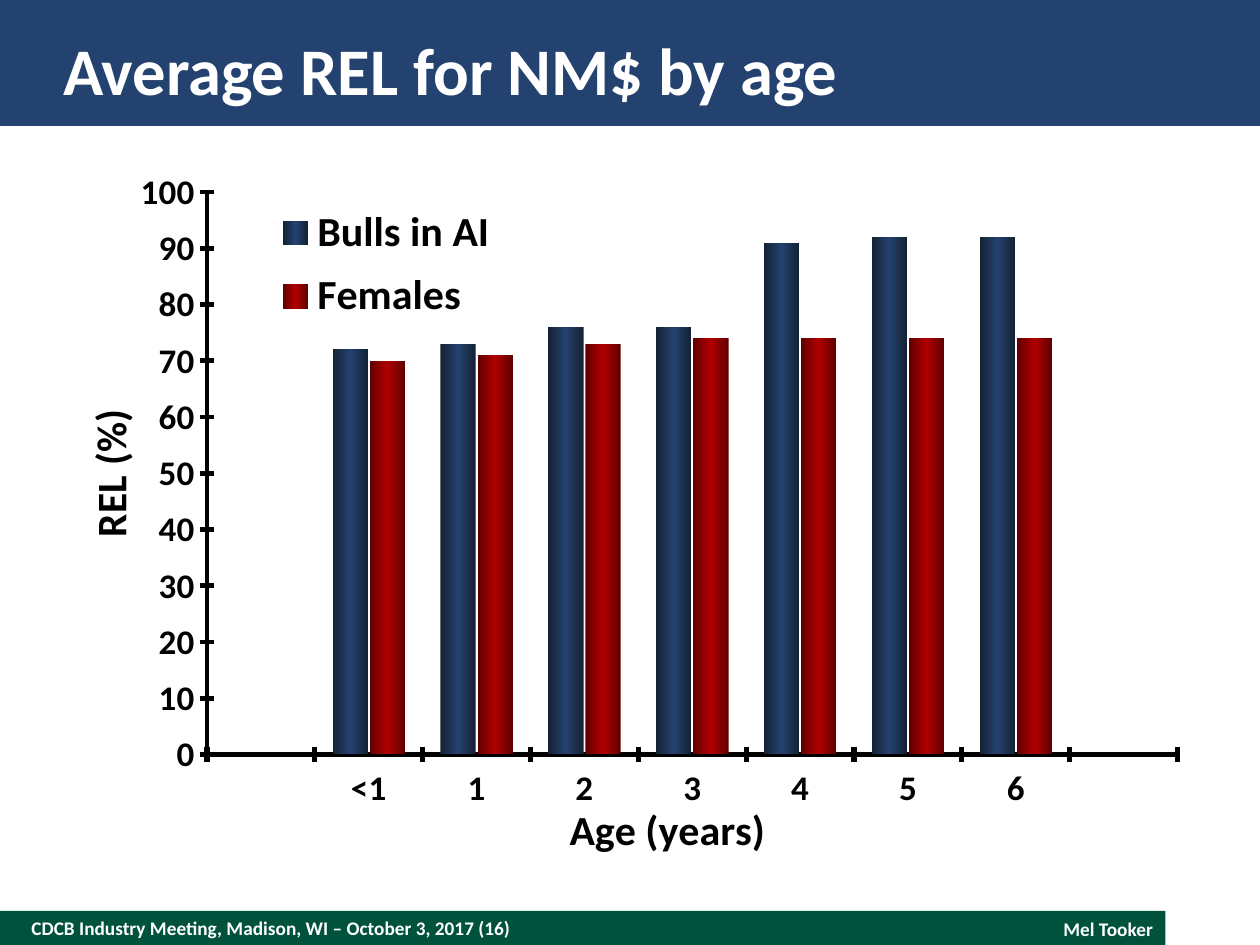
from copy import deepcopy
from dataclasses import dataclass

from pptx import Presentation
from pptx.chart.data import CategoryChartData
from pptx.dml.color import RGBColor
from pptx.enum.chart import XL_CHART_TYPE, XL_LEGEND_POSITION, XL_TICK_MARK
from pptx.enum.shapes import MSO_SHAPE
from pptx.enum.text import MSO_ANCHOR, MSO_AUTO_SIZE, PP_ALIGN
from pptx.oxml import parse_xml
from pptx.oxml.ns import nsdecls, qn
from pptx.util import Inches, Pt


@dataclass(frozen=True)
class Theme:
    font: str = "Calibri"
    navy: str = "244270"
    green: str = "00523C"
    white: str = "FFFFFF"
    black: str = "000000"
    title_size: int = 38
    label_size: int = 24
    tick_size: int = 20
    chart_size: int = 18
    footer_size: int = 11


THEME = Theme()
WIDTH, HEIGHT = 10, 7.5
FOOTER_HEIGHT = 0.27
FOOTER_TOP = HEIGHT - FOOTER_HEIGHT

HEADING = "Average REL for NM$ by age"
MEETING = "CDCB Industry Meeting, Madison, WI – October 3, 2017 (16)"
SPEAKER = "Mel Tooker"

AGES = ["", "<1", "1", "2", "3", "4", "5", "6", ""]
RELIABILITY = {
    "Bulls in AI": [None, 72, 73, 76, 76, 91, 92, 92, None],
    "Females": [None, 70, 71, 73, 74, 74, 74, 74, None],
}
BAR_SHADES = [("132133", THEME.navy), ("600000", "B00000")]

PLOT_AREA = dict(x=0.127, y=0.046, w=0.856, h=0.807)
LEGEND_AREA = dict(x=0.16, y=0.05, w=0.25, h=0.2)
AGE_TITLE_AREA = dict(x=0.44, y=0.91)
REL_TITLE_AREA = dict(x=0.01, y=0.35)


def rgb(value):
    return RGBColor.from_string(value)


def style(font, size, color):
    font.name = THEME.font
    font.size = Pt(size)
    font.bold = True
    font.color.rgb = rgb(color)


def write(frame, text, size, color, align=PP_ALIGN.LEFT):
    paragraph = frame.paragraphs[0]
    paragraph.alignment = align
    run = paragraph.add_run()
    run.text = text
    style(run.font, size, color)


def clear_margins(frame):
    frame.margin_left = frame.margin_right = 0
    frame.margin_top = frame.margin_bottom = 0


def add_band(slide, top, width, height, color):
    band = slide.shapes.add_shape(
        MSO_SHAPE.RECTANGLE, 0, Inches(top), Inches(width), Inches(height))
    band.shadow.inherit = False
    band.fill.solid()
    band.fill.fore_color.rgb = rgb(color)
    band.line.fill.background()


def add_footer_text(slide, left, width, height, text, align):
    box = slide.shapes.add_textbox(
        Inches(left), Inches(FOOTER_TOP), Inches(width), Inches(height))
    frame = box.text_frame
    frame.word_wrap = True
    write(frame, text, THEME.footer_size, THEME.white, align)
    return frame


def place(element, index, area, inner=False):
    for old in element.findall(qn("c:layout")):
        element.remove(old)
    target = '<c:layoutTarget val="inner"/>' if inner else ""
    modes = "".join(f'<c:{key}Mode val="edge"/>' for key in "xy")
    sizes = "".join(f'<c:{key} val="{value}"/>' for key, value in area.items())
    element.insert(index, parse_xml(
        f'<c:layout {nsdecls("c")}><c:manualLayout>{target}{modes}{sizes}'
        "</c:manualLayout></c:layout>"))


def style_axis(axis, title, area, line_width):
    axis.has_major_gridlines = False
    axis.major_tick_mark = XL_TICK_MARK.CROSS
    axis.minor_tick_mark = XL_TICK_MARK.NONE
    axis.format.line.color.rgb = rgb(THEME.black)
    axis.format.line.width = Pt(line_width)
    style(axis.tick_labels.font, THEME.tick_size, THEME.black)
    write(axis.axis_title.text_frame, title, THEME.label_size, THEME.black,
          PP_ALIGN.CENTER)
    place(axis.axis_title._element, 1, area)


def shade_bars(series, edge, middle):
    fill = series.format.fill
    fill.gradient()
    fill.gradient_angle = 0
    stop_list = next(series._element.iter(qn("a:gsLst")))
    stop_list.append(deepcopy(stop_list[0]))
    for stop, position, color in zip(
            fill.gradient_stops, (0, 0.5, 1), (edge, middle, edge)):
        stop.position = position
        stop.color.rgb = rgb(color)
    series.invert_if_negative = False


def add_reliability_chart(slide):
    data = CategoryChartData()
    data.categories = AGES
    for group, values in RELIABILITY.items():
        data.add_series(group, values)
    chart = slide.shapes.add_chart(
        XL_CHART_TYPE.COLUMN_CLUSTERED, Inches(0.5), Inches(1.27),
        Inches(9), Inches(5.63), data).chart
    chart.has_title = False
    style(chart.font, THEME.chart_size, THEME.black)

    bars = chart.plots[0]
    bars.vary_by_categories = False
    bars.gap_width = 100
    bars.overlap = -5
    for series, shades in zip(bars.series, BAR_SHADES):
        shade_bars(series, *shades)

    style_axis(chart.category_axis, "Age (years)", AGE_TITLE_AREA, 3)
    style_axis(chart.value_axis, "REL (%)", REL_TITLE_AREA, 2.75)
    chart.value_axis.minimum_scale = 0
    chart.value_axis.maximum_scale = 100
    chart.value_axis.major_unit = 10

    chart.has_legend = True
    legend = chart.legend
    legend.position = XL_LEGEND_POSITION.RIGHT
    legend.include_in_layout = False
    style(legend.font, THEME.label_size, THEME.black)
    place(legend._element, 1, LEGEND_AREA)
    place(next(chart._chartSpace.iter(qn("c:plotArea"))), 0, PLOT_AREA, inner=True)


def main():
    deck = Presentation()
    deck.slide_width, deck.slide_height = Inches(WIDTH), Inches(HEIGHT)
    slide = deck.slides.add_slide(deck.slide_layouts[5])
    heading = slide.shapes.title

    add_band(slide, FOOTER_TOP, 9.25, FOOTER_HEIGHT, THEME.green)
    add_band(slide, 0, WIDTH, 1, THEME.navy)
    meeting = add_footer_text(
        slide, 0.25, 6.5, FOOTER_HEIGHT, MEETING, PP_ALIGN.LEFT)
    clear_margins(meeting)
    meeting.vertical_anchor = MSO_ANCHOR.MIDDLE
    speaker = add_footer_text(slide, 7.25, 2, 0.29, SPEAKER, PP_ALIGN.RIGHT)
    speaker.auto_size = MSO_AUTO_SIZE.SHAPE_TO_FIT_TEXT

    slide.shapes._spTree.append(heading._element)
    heading.left, heading.top = Inches(0.5), Inches(0.2)
    heading.width, heading.height = Inches(9), Inches(0.7)
    clear_margins(heading.text_frame)
    heading.text_frame.auto_size = MSO_AUTO_SIZE.NONE
    heading.text_frame.vertical_anchor = MSO_ANCHOR.MIDDLE
    write(heading.text_frame, HEADING, THEME.title_size, THEME.white)

    add_reliability_chart(slide)
    deck.save("out.pptx")


if __name__ == "__main__":
    main()
